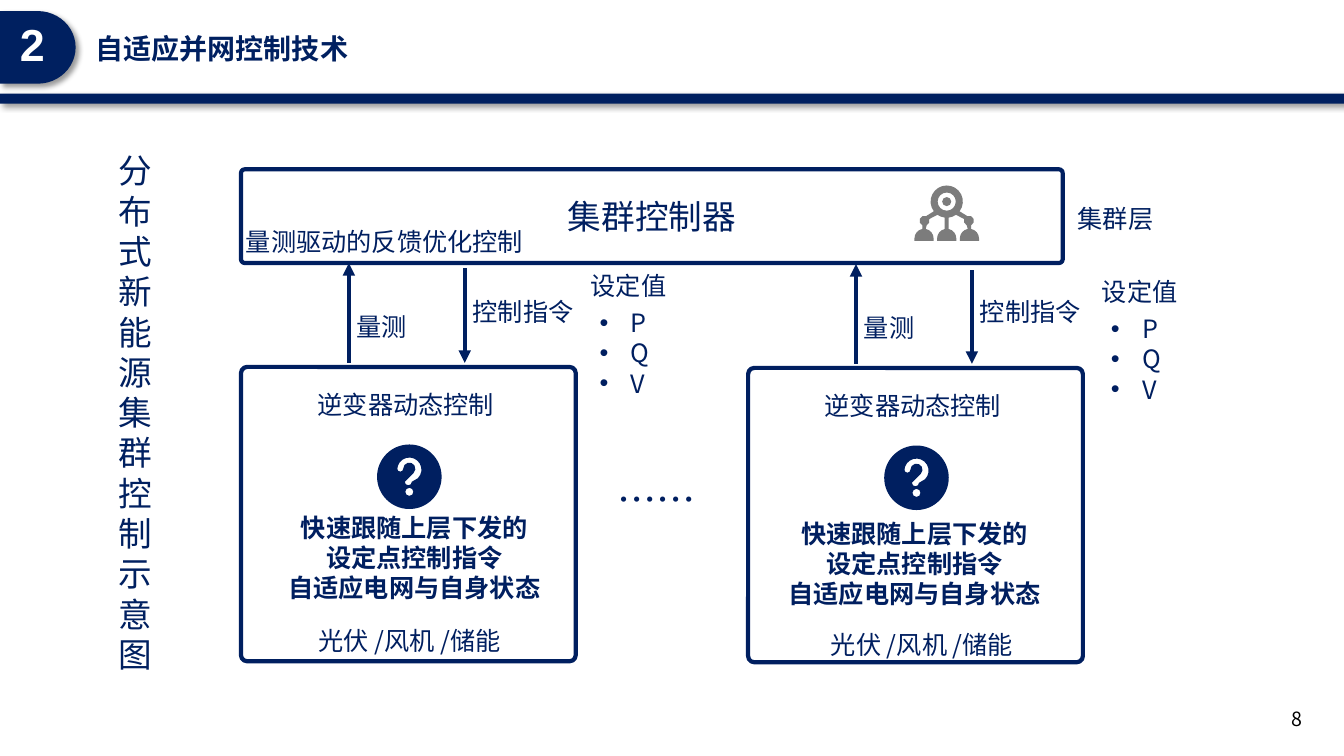
"""Build the slide on adaptive grid-connection control for clustered renewables."""
from math import ceil, cos, radians, sin, tan

from lxml.etree import SubElement
from pptx import Presentation
from pptx.dml.color import RGBColor
from pptx.enum.shapes import MSO_CONNECTOR, MSO_SHAPE
from pptx.enum.text import MSO_ANCHOR, PP_ALIGN
from pptx.oxml.ns import qn
from pptx.util import Pt

PX = 9144
NAVY = RGBColor(0x00, 0x20, 0x60)
INK = RGBColor(0x00, 0x1F, 0x60)
GREY = RGBColor(0x7C, 0x7C, 0x7C)
WHITE = RGBColor(0xFF, 0xFF, 0xFF)
BLACK = RGBColor(0x00, 0x00, 0x00)
CJK = "Noto Sans CJK SC"

deck = Presentation()
deck.slide_width, deck.slide_height = 1333 * PX, 750 * PX
slide = deck.slides.add_slide(deck.slide_layouts[6])
shapes = slide.shapes


def write(lines, at, size=18, colour=INK, face=CJK, bold=False,
          align=PP_ALIGN.LEFT, spacing=None, bullet=False, host=None):
    host = host or shapes.add_textbox(*[v * PX for v in at])
    frame = host.text_frame
    frame.word_wrap = True
    for number, line in enumerate(lines):
        paragraph = frame.paragraphs[0] if number == 0 else frame.add_paragraph()
        paragraph.alignment = align
        if spacing:
            paragraph.line_spacing = spacing
        if bullet:
            properties = paragraph._p.get_or_add_pPr()
            properties.set("marL", str(31 * PX))
            properties.set("indent", str(-31 * PX))
            SubElement(properties, qn("a:buFont"), typeface="Arial")
            SubElement(properties, qn("a:buChar"), char="•")
        run = paragraph.add_run()
        run.text = line
        run.font.size, run.font.bold, run.font.name = Pt(size), bold, face
        run.font.color.rgb = colour
        SubElement(run._r.get_or_add_rPr(), qn("a:ea"), typeface=CJK)


def arc(x, y, radius, start, end):
    pieces = ceil(abs(end - start) / 90)
    sweep = radians(end - start) / pieces
    reach = radius * 4 / 3 * tan(sweep / 4)
    knots = [(x + radius * cos(radians(start)), y + radius * sin(radians(start)), False)]
    for piece in range(pieces):
        a = radians(start) + piece * sweep
        b = a + sweep
        end_x, end_y = x + radius * cos(b), y + radius * sin(b)
        knots += [(knots[-1][0] - reach * sin(a), knots[-1][1] + reach * cos(a), True),
                  (end_x + reach * sin(b), end_y - reach * cos(b), True),
                  (end_x, end_y, False)]
    return knots


for preset, at in [
    (MSO_SHAPE.RECTANGLE, (0, 93, 1333, 10)),
    (MSO_SHAPE.FLOWCHART_DELAY, (0, 11, 75, 72)),
]:
    banner = shapes.add_shape(preset, *[v * PX for v in at])
    banner.fill.solid()
    banner.fill.fore_color.rgb = NAVY
    banner.line.fill.background()
    banner.shadow.inherit = False
    effects = banner._element.spPr.find(qn("a:effectLst"))
    shadow = SubElement(effects, qn("a:outerShdw"), blurRad=str(Pt(4)), dist=str(Pt(3)),
                        dir="2700000", algn="tl", rotWithShape="0")
    tint = SubElement(shadow, qn("a:prstClr"), val="black")
    SubElement(tint, qn("a:alpha"), val="40000")

write(["2"], (10, 18, 44, 66), 32, WHITE, "Arial", True, spacing=0.9)
write(["自适应并网控制技术"], (85, 30, 992, 40), 20, NAVY, "Arial", True, spacing=0.9)
write(["8"], (1271, 696, 62, 40), 14, BLACK)
write(["分布式新能源集群控制示意图"], (108, 144, 69, 535), 24, NAVY)

units = [
    dict(left=239, top=364, goal=(253, 503), sources=(278, 615),
         setpoint=(576, 263), command_top=266),
    dict(left=742, top=365, goal=(749, 509), sources=(786, 619),
         setpoint=(1083, 269), command_top=268),
]
frames = [((239, 168, 815, 93), 0.04)]
frames += [((unit["left"], unit["top"], 332, 292), 0.021) for unit in units]
for at, rounding in frames:
    box = shapes.add_shape(MSO_SHAPE.ROUNDED_RECTANGLE, *[v * PX for v in at])
    box.adjustments[0] = rounding
    box.fill.background()
    box.line.color.rgb = INK
    box.line.width = Pt(3)
    box.shadow.inherit = False
    if at[1] == 168:
        box.text_frame.vertical_anchor = MSO_ANCHOR.MIDDLE
        write(["集群控制器"], at, 24, align=PP_ALIGN.CENTER, host=box)

write(["量测驱动的反馈优化控制"], (234, 220, 321, 40))
write(["集群层"], (1059, 197, 97, 40))
write(["……"], (603, 467, 116, 57), 28)

for unit in units:
    left, top = unit["left"], unit["top"]
    write(["逆变器动态控制"], (left + 9, top + 17, 309, 40), align=PP_ALIGN.CENTER)
    write(["快速跟随上层下发的", "设定点控制指令", "自适应电网与自身状态"],
          (*unit["goal"], 316, 101), bold=True, align=PP_ALIGN.CENTER)
    write(["光伏 /风机 /储能"], (*unit["sources"], 257, 40), align=PP_ALIGN.CENTER)
    write(["量测"], (left + 105, top - 60, 77, 40))
    write(["控制指令"], (left + 220, 289, 125, 40))
    x, y = unit["setpoint"]
    write(["设定值"], (x, y, 97, 40))
    write(["P", "Q", "V"], (x + 9, y + 37, 60, 101), bullet=True)
    for x, start, end in [
        (left + 107, top - 4, top - 103),
        (left + 222, unit["command_top"], top - 4),
    ]:
        arrow = shapes.add_connector(
            MSO_CONNECTOR.STRAIGHT, *[v * PX for v in (x, start, x, end)])
        arrow.line.color.rgb = INK
        arrow.line.width = Pt(3)
        SubElement(arrow.line._get_or_add_ln(), qn("a:tailEnd"), type="triangle")
        SubElement(arrow._element.spPr, qn("a:effectLst"))

hook = (arc(0, -7, 12, 180, 405) + arc(-1, 5, 3.5, 0, 180)
        + arc(0, -8, 6, 45, -180) + arc(-9, -8, 3, 0, 180))
question = [arc(0, 0, 32, 0, 360), arc(0, 15, 4, 0, 360), hook]
half = (arc(0, 0, 16, -90, 37) + arc(22, 19, 5, -110, 65)
        + arc(22.5, 36.5, 9.5, -80, 0) + [(32, 39, False), (13, 39, False)]
        + arc(22.5, 36.5, 9.5, 180, 260) + arc(22, 19, 5, 115, 200)
        + arc(0, 0, 16, 55, 83) + arc(0, 36.5, 9.5, -78, 0) + [(9.5, 39, False)])
network = [half + [(-x, y, bend) for x, y, bend in reversed(half)],
           arc(0, 0, 9, 0, 360), arc(0, 0, 4.5, 0, 360)]

for centre_x, centre_y, contours, colour in [
    (406, 473, question, INK),
    (909, 474, question, INK),
    (939, 200, network, GREY),
]:
    outlines = [[((centre_x + x) * PX, (centre_y + y) * PX) for x, y, bend in contour]
                for contour in contours]
    builder = shapes.build_freeform(*outlines[0][0])
    builder.add_line_segments(outlines[0][1:])
    for outline in outlines[1:]:
        builder.move_to(*outline[0])
        builder.add_line_segments(outline[1:])
    icon = builder.convert_to_shape()
    icon.fill.solid()
    icon.fill.fore_color.rgb = colour
    icon.line.fill.background()
    icon.shadow.inherit = False
    steps = [step for step in icon._element.iter(qn("a:moveTo"), qn("a:lnTo"))]
    bends = [bend for contour in contours for x, y, bend in contour]
    for first in range(len(steps) - 2):
        if bends[first] and bends[first + 1]:
            curve = SubElement(steps[first].getparent(), qn("a:cubicBezTo"))
            steps[first].addprevious(curve)
            for step in steps[first:first + 3]:
                curve.append(step[0])
                step.getparent().remove(step)

deck.save("out.pptx")
